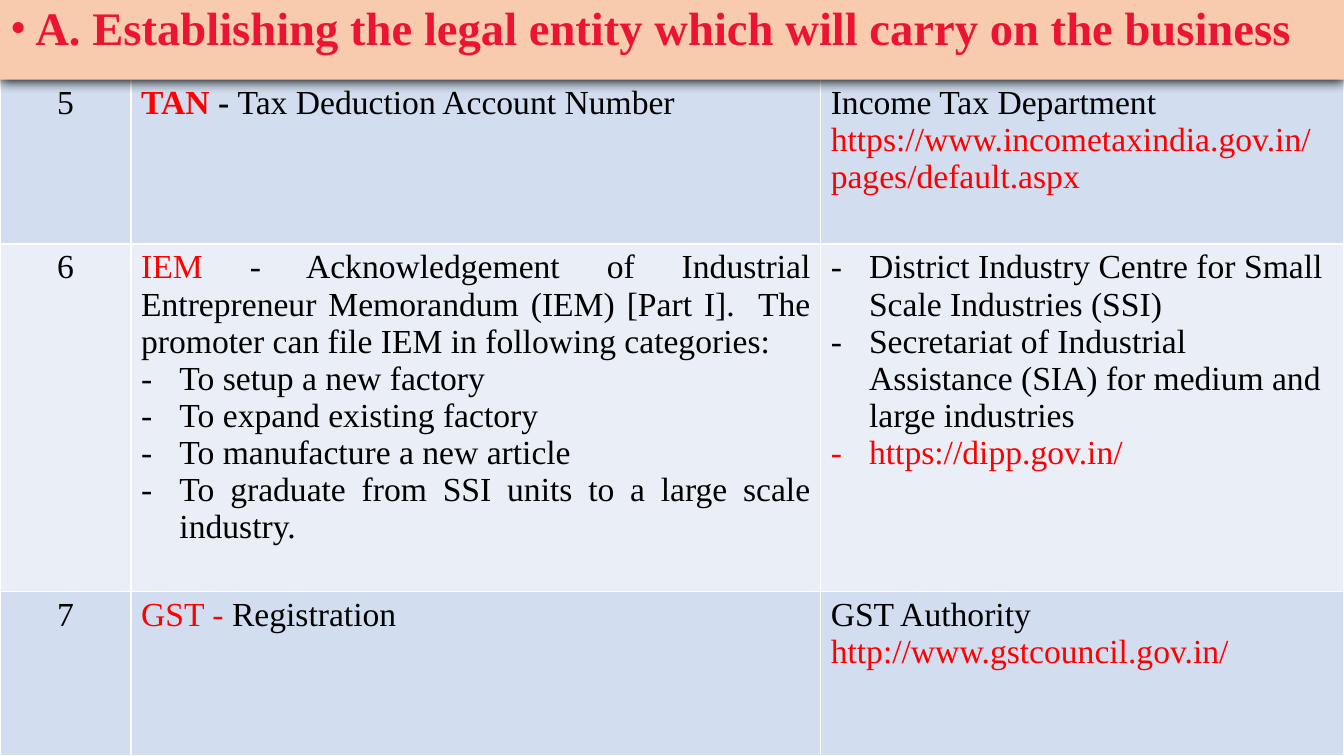
import lxml.etree
import pptx
import pptx.dml.color
import pptx.enum.text
import pptx.oxml.ns
import pptx.util

PX = 9144
FONT = "Times New Roman"
COLORS = {
    "banner": "F8CBAD", "heading": "EC1433", "accent": "FF0000", "text": "000000",
    "band_dark": "D2DEEF", "band_light": "EAEFF7", "border": "FFFFFF", "shadow": "000000",
}
ALIGN = pptx.enum.text.PP_ALIGN
COLUMN_WIDTHS = [130, 684, 519]
ROW_HEIGHTS = [163, 345, 163]
BULLET_INDENT = 38

REGISTRATIONS = [
    [
        [[("5", "text", False)]],
        [[("TAN", "accent", True), (" - ", "text", True),
          ("Tax Deduction Account Number", "text", False)]],
        [[("Income Tax Department", "text", False)],
         [("https://www.incometaxindia.gov.in/pages/default.aspx", "accent", False)]],
    ],
    [
        [[("6", "text", False)]],
        [[("IEM ", "accent", False),
          ("- Acknowledgement of Industrial Entrepreneur Memorandum (IEM) [Part I].  "
           "The promoter can file IEM in following categories:", "text", False)],
         "To setup a new factory",
         "To expand existing factory",
         "To manufacture a new article",
         "To graduate from SSI units to a large scale industry."],
        ["District Industry Centre for Small Scale Industries (SSI)",
         "Secretariat of Industrial Assistance (SIA) for medium and large industries",
         "https://dipp.gov.in/"],
    ],
    [
        [[("7", "text", False)]],
        [[("GST - ", "accent", False), ("Registration", "text", False)]],
        [[("GST Authority", "text", False)],
         [("http://www.gstcouncil.gov.in/", "accent", False)]],
    ],
]


def px(length):
    """Turn px into EMU."""
    return pptx.util.Emu(length * PX)


def rgb(name):
    """Look up a named colour."""
    return pptx.dml.color.RGBColor.from_string(COLORS[name])


def add_node(parent, tag, **attributes):
    """Append a DrawingML element and return it."""
    return lxml.etree.SubElement(parent, pptx.oxml.ns.qn("a:" + tag), attributes)


def style_run(run, size, color, bold):
    """Set the font of a run."""
    run.font.name = FONT
    run.font.size = pptx.util.Pt(size)
    run.font.bold = bold
    run.font.color.rgb = rgb(color)


def set_bullet(paragraph, mark, indent):
    """Give a paragraph a hanging bullet."""
    properties = paragraph._p.get_or_add_pPr()
    properties.set("marL", str(px(indent)))
    properties.set("indent", str(px(-indent)))
    add_node(properties, "buFont", typeface=FONT)
    add_node(properties, "buChar", char=mark)


def fill_entry(paragraph, entry, alignment):
    """Write a table paragraph, bulleted when it is a plain string."""
    paragraph.alignment = alignment
    if isinstance(entry, str):
        set_bullet(paragraph, "-", BULLET_INDENT)
        entry = [(entry, "accent" if entry.startswith("http") else "text", False)]
    for text, color, bold in entry:
        run = paragraph.add_run()
        run.text = text
        style_run(run, 24, color, bold)


def set_borders(cell):
    """Draw thin borders on all sides of a cell."""
    properties = cell._tc.get_or_add_tcPr()
    for position, side in enumerate(["lnL", "lnR", "lnT", "lnB"]):
        border = add_node(properties, side, w=str(pptx.util.Pt(1)))
        add_node(add_node(border, "solidFill"), "srgbClr", val=COLORS["border"])
        properties.insert(position, border)


def add_registrations(slide, left, top):
    """Place the table of registrations and authorities."""
    table = slide.shapes.add_table(
        len(ROW_HEIGHTS), len(COLUMN_WIDTHS), px(left), px(top),
        px(sum(COLUMN_WIDTHS)), px(sum(ROW_HEIGHTS))).table
    table.first_row = False
    for column, width in zip(table.columns, COLUMN_WIDTHS):
        column.width = px(width)
    for row_index, registration in enumerate(REGISTRATIONS):
        table.rows[row_index].height = px(ROW_HEIGHTS[row_index])
        for column_index, entries in enumerate(registration):
            cell = table.cell(row_index, column_index)
            cell.fill.solid()
            cell.fill.fore_color.rgb = rgb("band_light" if row_index % 2 else "band_dark")
            set_borders(cell)
            alignment = ALIGN.CENTER if column_index == 0 else ALIGN.LEFT
            if (row_index, column_index) == (1, 1):
                alignment = ALIGN.JUSTIFY
            frame = cell.text_frame
            for entry_index, entry in enumerate(entries):
                paragraph = frame.add_paragraph() if entry_index else frame.paragraphs[0]
                fill_entry(paragraph, entry, alignment)


def add_heading(slide, left, top, width, height):
    """Place the heading banner in front of the table."""
    heading = slide.shapes.title
    heading.left, heading.top = px(left), px(top)
    heading.width, heading.height = px(width), px(height)
    heading.fill.solid()
    heading.fill.fore_color.rgb = rgb("banner")
    heading.line.fill.background()
    heading.shadow.inherit = False
    effects = heading._element.spPr.find(pptx.oxml.ns.qn("a:effectLst"))
    shadow = add_node(effects, "outerShdw", blurRad=str(pptx.util.Pt(8.5)),
                      dist=str(pptx.util.Pt(1)), dir="5400000", algn="t", rotWithShape="0")
    add_node(shadow, "srgbClr", val=COLORS["shadow"])

    frame = heading.text_frame
    frame.text = "A. Establishing the legal entity which will carry on the business"
    frame.word_wrap = True
    frame.auto_size = pptx.enum.text.MSO_AUTO_SIZE.NONE
    frame.vertical_anchor = pptx.enum.text.MSO_ANCHOR.TOP
    paragraph = frame.paragraphs[0]
    paragraph.alignment = ALIGN.LEFT
    paragraph.line_spacing = 0.9
    paragraph.space_before = pptx.util.Pt(10)
    set_bullet(paragraph, "•", 25)
    style_run(paragraph.runs[0], 33.3, "heading", True)
    slide.shapes._spTree.append(heading._element)


def main():
    """Build and save the slide."""
    presentation = pptx.Presentation()
    presentation.slide_width, presentation.slide_height = px(1333), px(750)
    slide = presentation.slides.add_slide(presentation.slide_layouts[5])
    add_registrations(slide, 0, 79)
    add_heading(slide, 0, 0, 1333, 79)
    presentation.save("out.pptx")


if __name__ == "__main__":
    main()
